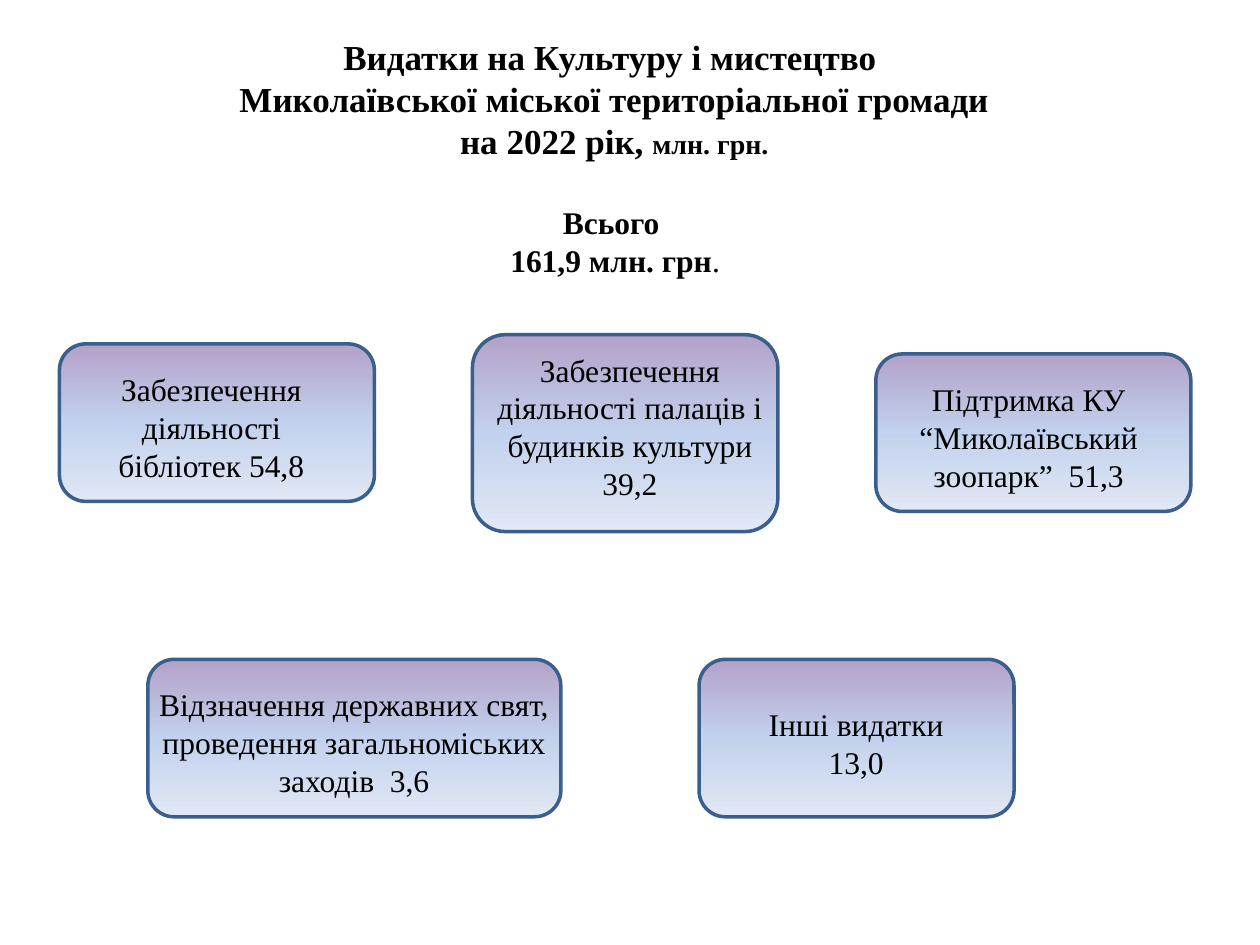
import copy
from dataclasses import dataclass

import pptx
import pptx.dml.color
import pptx.enum.shapes
import pptx.enum.text
import pptx.oxml.ns
import pptx.util

Pt = pptx.util.Pt
FONT = "Times New Roman"
GRADIENT = [(0, "B3A2C7"), (0.5, "C2D1ED"), (1, "E1E8F5")]
BORDER = "3A5F8C"
TEXT = "000000"


@dataclass
class Area:
    left: float
    top: float
    width: float
    height: float

    def lengths(self) -> list:
        return [Pt(v) for v in (self.left, self.top, self.width, self.height)]


@dataclass
class Run:
    text: str
    size: float = 18
    bold: bool = False


@dataclass
class Expense:
    card: Area
    label: Area
    lines: list[str]


def rgb(color: str) -> pptx.dml.color.RGBColor:
    return pptx.dml.color.RGBColor.from_string(color)


def fill_text(sp, lines: list[list[Run]], grow: bool = True) -> None:
    """Write centred lines, each made of one or more runs."""
    tf = sp.text_frame
    tf.word_wrap = True
    tf.vertical_anchor = pptx.enum.text.MSO_ANCHOR.TOP
    sizes = pptx.enum.text.MSO_AUTO_SIZE
    tf.auto_size = sizes.SHAPE_TO_FIT_TEXT if grow else sizes.NONE
    for i, runs in enumerate(lines):
        p = tf.add_paragraph() if i else tf.paragraphs[0]
        p.alignment = pptx.enum.text.PP_ALIGN.CENTER
        for run in runs:
            r = p.add_run()
            r.text = run.text
            r.font.name = FONT
            r.font.size = Pt(run.size)
            r.font.bold = run.bold
            r.font.color.rgb = rgb(TEXT)


def add_card(s, area: Area) -> None:
    """Draw a rounded card with a vertical three-stop gradient."""
    shape_type = pptx.enum.shapes.MSO_SHAPE.ROUNDED_RECTANGLE
    sp = s.shapes.add_shape(shape_type, *area.lengths())
    sp.shadow.inherit = False
    sp.fill.gradient()
    sp.fill.gradient_angle = 270
    stop_list = sp._element.spPr.find(".//" + pptx.oxml.ns.qn("a:gsLst"))
    stop_list.append(copy.deepcopy(stop_list[-1]))
    for stop, (position, color) in zip(sp.fill.gradient_stops, GRADIENT):
        stop.position = position
        stop.color.rgb = rgb(color)
    sp.line.color.rgb = rgb(BORDER)
    sp.line.width = Pt(2)


def add_expense(s, expense: Expense) -> None:
    add_card(s, expense.card)
    sp = s.shapes.add_textbox(*expense.label.lengths())
    fill_text(sp, [[Run(line)] for line in expense.lines])


EXPENSES = [
    Expense(Area(34, 196.5, 180, 90), Area(50.5, 208, 140.5, 72.5),
            ["Забезпечення діяльності бібліотек 54,8"]),
    Expense(Area(270, 191.25, 174.5, 112.5), Area(270, 196.75, 180, 94.25),
            ["Забезпечення діяльності палаців і будинків культури 39,2"]),
    Expense(Area(399.5, 376.75, 180, 90), Area(410.5, 399.5, 157.5, 51),
            ["Інші видатки", "13,0"]),
    Expense(Area(84.5, 376.75, 236, 90), Area(78.5, 388, 247.75, 72.5),
            ["Відзначення державних свят, проведення загальноміських заходів  3,6"]),
    Expense(Area(500.5, 202.25, 180, 90), Area(517.5, 213.75, 140.5, 72.5),
            ["Підтримка КУ “Миколаївський зоопарк”  51,3"]),
]


def main() -> None:
    prs = pptx.Presentation()
    prs.slide_width, prs.slide_height = Pt(720), Pt(540)
    s = prs.slides.add_slide(prs.slide_layouts[5])

    # Title
    title = s.shapes.title
    title.left, title.top, title.width, title.height = Area(
        50.5, 16.5, 596, 80).lengths()
    fill_text(title, [
        [Run("Видатки на Культуру і мистецтво", 20, True)],
        [Run(" Миколаївської міської територіальної громади", 20, True)],
        [Run(" на 2022 рік, ", 20, True), Run("млн. грн.", 16, True)],
    ])

    # Expense cards
    for expense in EXPENSES:
        add_expense(s, expense)

    # Total
    total = s.shapes.add_textbox(*Area(258.5, 112.5, 181.5, 64).lengths())
    fill_text(total, [
        [Run("Всього", bold=True)],
        [Run(" 161,9 млн. грн", bold=True), Run(".")],
    ], grow=False)

    prs.save("out.pptx")


if __name__ == "__main__":
    main()
